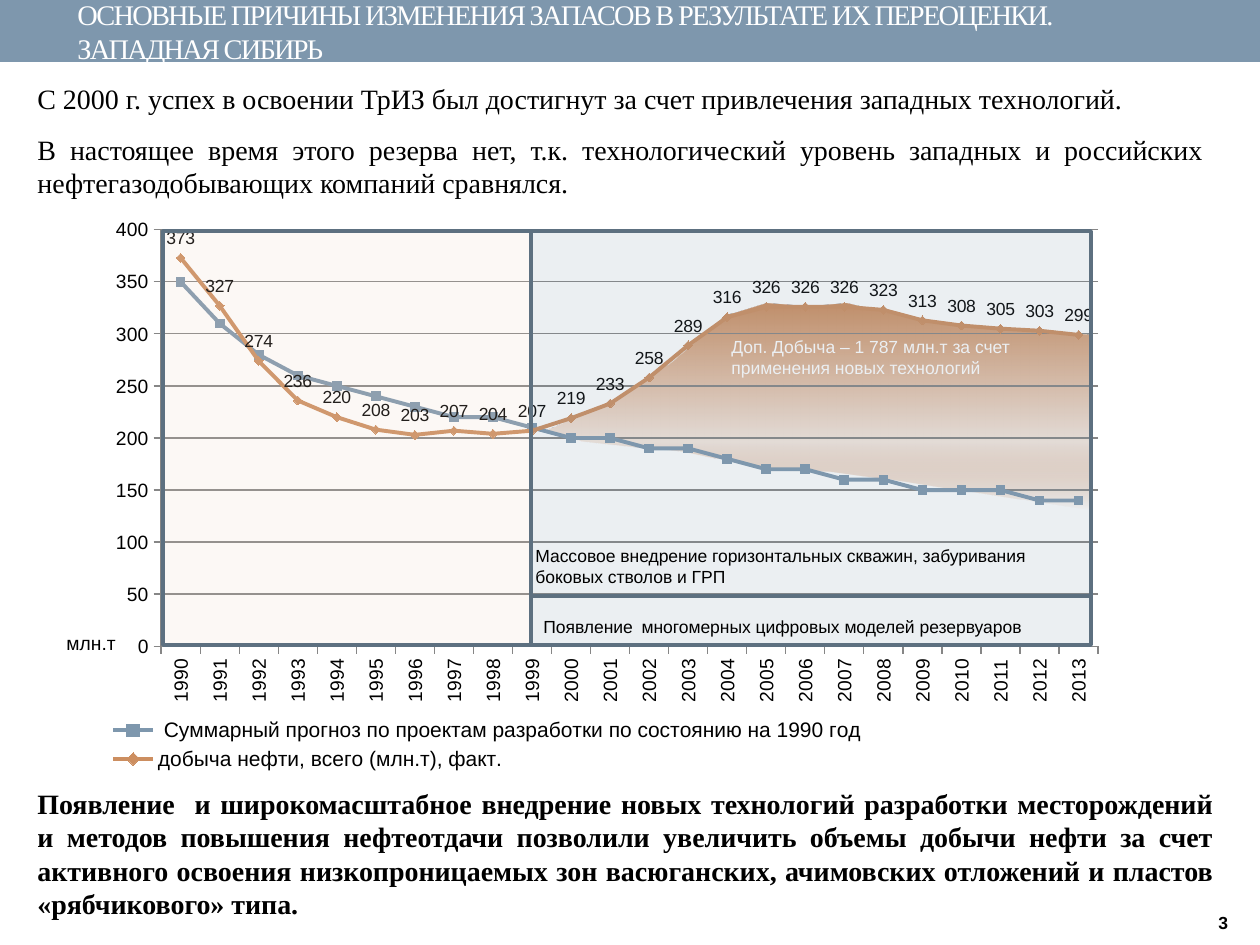
from lxml.etree import SubElement
from pptx import Presentation
from pptx.chart.data import CategoryChartData
from pptx.dml.color import RGBColor
from pptx.enum.chart import (XL_CHART_TYPE, XL_LABEL_POSITION, XL_LEGEND_POSITION,
                             XL_MARKER_STYLE, XL_TICK_MARK)
from pptx.enum.shapes import MSO_SHAPE
from pptx.enum.text import MSO_ANCHOR, PP_ALIGN
from pptx.oxml import parse_xml
from pptx.oxml.ns import nsdecls, qn
from pptx.util import Pt

PX = 914400 / 126
BLUE, ORANGE, SAND, FRAME = "7E97AD", "CC8E60", "EBD2BF", "5D7080"
BLACK, WHITE, GRID = "000000", "FFFFFF", "868686"
SERIF, SANS = "Times New Roman", "Arial"
SMALL = {"name": SANS, "size": Pt(10), "color": BLACK}
BODY = {"name": SERIF, "size": Pt(16), "color": BLACK}

FORECAST = [350, 310, 280, 260, 250, 240, 230, 220, 220, 210, 200, 200,
            190, 190, 180, 170, 170, 160, 160, 150, 150, 150, 140, 140]
ACTUAL = [373, 327, 274, 236, 220, 208, 203, 207, 204, 207, 219, 233,
          258, 289, 316, 326, 326, 326, 323, 313, 308, 305, 303, 299]
GAIN_OUTLINE = [(547, 430), (622, 397), (673, 362), (726, 316), (767, 304), (809, 307),
                (847, 304), (920, 320), (1002, 330), (1091, 335), (1091, 509), (892, 479),
                (830, 471), (790, 470), (733, 461), (683, 451), (631, 446), (583, 441)]


def emu(*lengths):
    return [round(v * PX) for v in lengths]


def rgb(value):
    return RGBColor.from_string(value)


def set_font(font, fmt):
    for key, value in fmt.items():
        if key == "color":
            font.color.rgb = rgb(value)
        else:
            setattr(font, key, value)


def set_line(line, color, width):
    line.color.rgb = rgb(color)
    line.width = Pt(width)


def fill_text(sp, paragraphs, fmt, anchor=MSO_ANCHOR.TOP, align=PP_ALIGN.LEFT, after=0):
    tf = sp.text_frame
    tf.word_wrap = True
    tf.vertical_anchor = anchor
    for i, text in enumerate(paragraphs):
        p = tf.add_paragraph() if i else tf.paragraphs[0]
        p.text = text
        p.alignment = align
        p.space_after = Pt(after)
        for r in p.runs:
            set_font(r.font, fmt)
    return sp


def add_text(s, box, paragraphs, fmt, **layout):
    return fill_text(s.shapes.add_textbox(*emu(*box)), paragraphs, fmt, **layout)


def add_rect(s, box, color, alpha=None, frame=None):
    sp = s.shapes.add_shape(MSO_SHAPE.RECTANGLE, *emu(*box))
    sp.shadow.inherit = False
    sp.fill.solid()
    sp.fill.fore_color.rgb = rgb(color)
    if alpha:
        clr = sp._element.spPr.find(qn("a:solidFill"))[0]
        SubElement(clr, qn("a:alpha"), val=str(alpha * 1000))
    if frame:
        set_line(sp.line, frame, 2.08)
    else:
        sp.line.fill.background()
    return sp


def header(s, box):
    x, y, w, h = box
    add_rect(s, box, BLUE)
    sp = add_text(s, (x + 65, y, w - 126, h),
                  ["ОСНОВНЫЕ ПРИЧИНЫ ИЗМЕНЕНИЯ ЗАПАСОВ В РЕЗУЛЬТАТЕ ИХ ПЕРЕОЦЕНКИ. \v"
                   "ЗАПАДНАЯ СИБИРЬ"],
                  {"name": SERIF, "size": Pt(16.2), "color": WHITE},
                  anchor=MSO_ANCHOR.MIDDLE)
    for r in sp.text_frame.paragraphs[0].runs:
        r.font._element.set("spc", "-100")


def gain_area(s):
    """Shade the production gained between the two curves."""
    builder = s.shapes.build_freeform(*GAIN_OUTLINE[0], scale=PX)
    builder.add_line_segments(GAIN_OUTLINE[1:], close=True)
    sp = builder.convert_to_shape()
    sp.shadow.inherit = False
    sp.line.fill.background()
    grad = parse_xml(f'<a:gradFill {nsdecls("a")} rotWithShape="1"><a:gsLst/>'
                     '<a:lin ang="5400000" scaled="0"/></a:gradFill>')
    for pos, color, alpha in ((0, ORANGE, 100), (67, "F5E8DF", 100), (100, ORANGE, 0)):
        stop = SubElement(grad[0], qn("a:gs"), pos=str(pos * 1000))
        clr = SubElement(stop, qn("a:srgbClr"), val=color)
        SubElement(clr, qn("a:alpha"), val=str(alpha * 1000))
    sp._element.spPr.find(qn("a:custGeom")).addnext(grad)


def set_layout(parent, index, box, inner=False):
    """Give a plot area or legend a fixed place, in fractions of the chart."""
    for old in parent.findall(qn("c:layout")):
        parent.remove(old)
    target = '<c:layoutTarget val="inner"/>' if inner else ""
    parts = "".join(f'<c:{k} val="{v}"/>' for k, v in
                    zip(("xMode", "yMode", "x", "y", "w", "h"), ("edge", "edge", *box)))
    parent.insert(index, parse_xml(f'<c:layout {nsdecls("c")}><c:manualLayout>{target}{parts}'
                                   '</c:manualLayout></c:layout>'))


def no_fill():
    return parse_xml(f'<c:spPr {nsdecls("c", "a")}><a:noFill/><a:ln><a:noFill/></a:ln></c:spPr>')


def production_chart(s, box):
    data = CategoryChartData()
    data.categories = [str(year) for year in range(1990, 2014)]
    data.add_series(" Суммарный прогноз по проектам разработки по состоянию на 1990 год", FORECAST)
    data.add_series("добыча нефти, всего (млн.т), факт. ", ACTUAL)
    chart = s.shapes.add_chart(XL_CHART_TYPE.LINE_MARKERS, *emu(*box), data).chart
    chart.has_title = False
    set_font(chart.font, {"name": SANS, "size": Pt(18), "color": BLACK})

    value, category = chart.value_axis, chart.category_axis
    for key, v in {"minimum_scale": 0, "maximum_scale": 400, "major_unit": 50,
                   "has_major_gridlines": True}.items():
        setattr(value, key, v)
    set_line(value.major_gridlines.format.line, GRID, 0.75)
    for axis in (value, category):
        axis.major_tick_mark = XL_TICK_MARK.OUTSIDE
        set_line(axis.format.line, GRID, 0.75)
        set_font(axis.tick_labels.font, {"name": SANS, "size": Pt(11), "color": BLACK})
    turn = category._element.find(qn("c:txPr")).find(qn("a:bodyPr"))
    turn.set("rot", "-5400000")
    turn.set("vert", "horz")

    plot = chart.plots[0]
    plot.vary_by_categories = False
    markers = (XL_MARKER_STYLE.SQUARE, XL_MARKER_STYLE.DIAMOND)
    for series, color, style in zip(plot.series, (BLUE, ORANGE), markers):
        series.smooth = False
        set_line(series.format.line, color, 2.25)
        series.marker.style = style
        series.marker.size = 5
        series.marker.format.fill.solid()
        series.marker.format.fill.fore_color.rgb = rgb(color)
        set_line(series.marker.format.line, color, 0.75)
    labels = plot.series[1].data_labels
    labels.show_value = True
    labels.position = XL_LABEL_POSITION.ABOVE
    set_font(labels.font, SMALL)

    chart.has_legend = True
    legend = chart.legend
    legend.position = XL_LEGEND_POSITION.BOTTOM
    legend.include_in_layout = False
    set_font(legend.font, {"name": SANS, "size": Pt(12), "color": BLACK})
    set_layout(legend._element, 1, (0.04, 0.8, 0.73, 0.1))

    area = chart._chartSpace.chart.plotArea
    set_layout(area, 0, (0.1, 0.039, 0.875, 0.656), inner=True)
    area.append(no_fill())
    chart._chartSpace.chart.addnext(no_fill())


def chart_region(s, box):
    x, y, w, h = box
    gain_area(s)
    production_chart(s, box)
    add_text(s, (x, y + 420, 89, 36), ["млн.т"], {**SMALL, "size": Pt(11)})
    add_text(s, (x + 665, y + 125, 397, 55),
             ["Доп. Добыча – 1 787 млн.т за счет применения новых технологий"],
             {**SMALL, "color": WHITE})
    left, top, split, right = x + 109, y + 26, x + 477, x + 1037
    bottom, base = y + 440, y + 391
    add_rect(s, (split, top, right - split, base - top), BLUE, 15, FRAME)
    add_text(s, (split - 8, base - 57, right - split + 8, 55),
             ["Массовое внедрение горизонтальных скважин, забуривания боковых стволов и ГРП"],
             SMALL)
    sp = add_rect(s, (split, base, right - split, bottom - base), BLUE, 15, FRAME)
    fill_text(sp, ["Появление"], SMALL, anchor=MSO_ANCHOR.MIDDLE)
    p = sp.text_frame.paragraphs[0]
    for text, size in ((" ", 18), ("многомерных цифровых моделей резервуаров", 10)):
        r = p.add_run()
        r.text = text
        set_font(r.font, {**SMALL, "size": Pt(size)})
    add_rect(s, (left, top, split - left, bottom - top), SAND, 15, FRAME)


def main():
    prs = Presentation()
    prs.slide_width, prs.slide_height = emu(1260, 945)
    s = prs.slides.add_slide(prs.slide_layouts[6])
    header(s, (0, 0, 1260, 62))
    chart_region(s, (54, 205, 1071, 635))
    add_text(s, (25, 75, 1191, 132),
             ["С 2000 г. успех в освоении ТрИЗ был достигнут за счет привлечения западных технологий.",
              "В настоящее время этого резерва нет, т.к. технологический уровень западных и "
              "российских нефтегазодобывающих компаний сравнялся."],
             BODY, align=PP_ALIGN.JUSTIFY, after=10)
    add_text(s, (25, 780, 1201, 149),
             ["Появление  и широкомасштабное внедрение новых технологий разработки месторождений "
              "и методов повышения нефтеотдачи позволили увеличить объемы добычи нефти за счет "
              "активного освоения низкопроницаемых зон васюганских, ачимовских отложений и "
              "пластов «рябчикового» типа."],
             {**BODY, "bold": True}, align=PP_ALIGN.JUSTIFY)
    add_text(s, (1206, 900, 53, 45), ["3"], {**SMALL, "bold": True}, anchor=MSO_ANCHOR.MIDDLE)
    prs.save("out.pptx")


if __name__ == "__main__":
    main()
